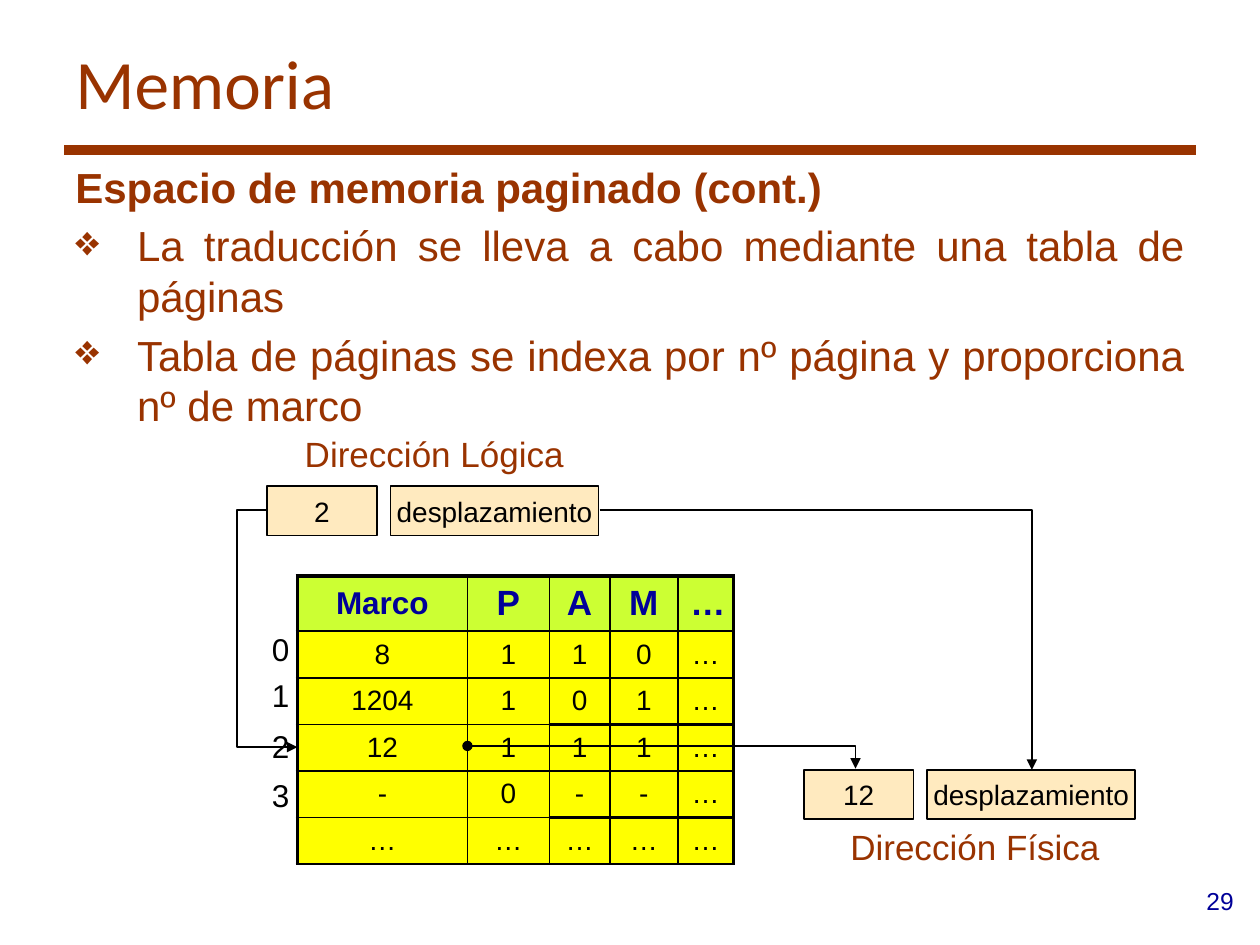
from lxml import etree
from pptx import Presentation
from pptx.dml.color import RGBColor
from pptx.enum.shapes import MSO_CONNECTOR, MSO_SHAPE
from pptx.enum.text import MSO_ANCHOR, PP_ALIGN
from pptx.oxml.ns import qn
from pptx.util import Inches, Pt

LEFT, CENTER, RIGHT, JUSTIFY = PP_ALIGN.LEFT, PP_ALIGN.CENTER, PP_ALIGN.RIGHT, PP_ALIGN.JUSTIFY
TOP, MIDDLE = MSO_ANCHOR.TOP, MSO_ANCHOR.MIDDLE
RECT = MSO_SHAPE.RECTANGLE
STRAIGHT, ELBOW = MSO_CONNECTOR.STRAIGHT, MSO_CONNECTOR.ELBOW

COLORS = {
    "brown": "993300",
    "navy": "000099",
    "black": "000000",
    "peach": "FFEABF",
    "lime": "CCFF33",
    "yellow": "FFFF00",
}
RGB = {name: RGBColor.from_string(value) for name, value in COLORS.items()}


def add_run(p, text, size, color, align=LEFT, bold=False, font="Arial"):
    p.alignment = align
    r = p.add_run()
    r.text = text
    r.font.name = font
    r.font.size = Pt(size)
    r.font.bold = bold
    r.font.color.rgb = RGB[color]


def add_line(kind, x1, y1, x2, y2, color, width):
    c = s.shapes.add_connector(kind, Inches(x1), Inches(y1), Inches(x2), Inches(y2))
    c.line.color.rgb = RGB[color]
    c.line.width = Pt(width)
    etree.SubElement(c._element.spPr, qn("a:effectLst"))
    return c


prs = Presentation()
prs.slide_width, prs.slide_height = Inches(10), Inches(7.5)
s = prs.slides.add_slide(prs.slide_layouts[6])

add_line(STRAIGHT, 0.51, 1.19, 9.49, 1.19, "brown", 6)

labels = [
    ("Memoria", 0.5, 0.3, 9, 0.69, 39.6, "brown", LEFT, MIDDLE, "Calibri"),
    ("29", 9.1, 6.98, 0.79, 0.29, 14, "navy", RIGHT, TOP, "Arial"),
    ("Dirección Lógica", 2.32, 3.38, 2.68, 0.39, 20, "brown", JUSTIFY, TOP, "Arial"),
    ("Dirección Física", 6.65, 6.5, 2.68, 0.39, 20, "brown", JUSTIFY, TOP, "Arial"),
]
for i, y in enumerate([4.95, 5.32, 5.72, 6.11]):
    labels.append((str(i), 2.06, y, 0.34, 0.4, 18, "black", LEFT, TOP, "Arial"))
for text, x, y, w, h, size, color, align, anchor, font in labels:
    tf = s.shapes.add_textbox(Inches(x), Inches(y), Inches(w), Inches(h)).text_frame
    tf.word_wrap = True
    tf.vertical_anchor = anchor
    add_run(tf.paragraphs[0], text, size, color, align, font=font)

tf = s.shapes.add_textbox(Inches(0.5), Inches(1.23), Inches(9), Inches(1.23)).text_frame
tf.word_wrap = True
add_run(tf.paragraphs[0], "Espacio de memoria paginado (cont.)", 24, "brown", JUSTIFY, True)
for text in [
    "La traducción se lleva a cabo mediante una tabla de páginas",
    "Tabla de páginas se indexa por nº página y proporciona nº de marco",
]:
    p = tf.add_paragraph()
    pPr = p._p.get_or_add_pPr()
    pPr.set("marL", str(Inches(0.49)))
    pPr.set("indent", str(-Inches(0.49)))
    etree.SubElement(pPr, qn("a:buChar")).set("char", "❖")
    p.space_before = Pt(4.8)
    add_run(p, text, 24, "brown", JUSTIFY)

for x, y, page in [(2.12, 3.86, "2"), (6.38, 6.11, "12")]:
    for dx, w, text in [(0, 0.87, page), (0.98, 1.65, "desplazamiento")]:
        sp = s.shapes.add_shape(RECT, Inches(x + dx), Inches(y), Inches(w), Inches(0.39))
        sp.shadow.inherit = False
        sp.fill.solid()
        sp.fill.fore_color.rgb = RGB["peach"]
        sp.line.color.rgb = RGB["black"]
        sp.line.width = Pt(1)
        tf = sp.text_frame
        tf.word_wrap = False
        tf.vertical_anchor = MIDDLE
        add_run(tf.paragraphs[0], text, 16, "black", CENTER)

rows = [
    ["Marco", "P", "A", "M", "…"],
    ["8", "1", "1", "0", "…"],
    ["1204", "1", "0", "1", "…"],
    ["12", "1", "1", "1", "…"],
    ["-", "0", "-", "-", "…"],
    ["…"] * 5,
]
widths = [1.35, 0.65, 0.48, 0.54, 0.44]
heights = [0.44] + [0.37] * 5
vertical = [2.25, 1, 1, 1.5, 1.5, 2.25]
table = s.shapes.add_table(
    len(rows), len(widths), Inches(2.36), Inches(4.57), Inches(sum(widths)), Inches(sum(heights))
).table
for col, w in zip(table.columns, widths):
    col.width = Inches(w)
for row, h in zip(table.rows, heights):
    row.height = Inches(h)
for i, row in enumerate(rows):
    for j, text in enumerate(row):
        cell = table.cell(i, j)
        cell.vertical_anchor = MIDDLE
        inner = 1 if j < 2 else 1.5
        borders = {
            "a:lnL": vertical[j],
            "a:lnR": vertical[j + 1],
            "a:lnT": 2.25 if i == 0 else inner,
            "a:lnB": 1 if i == len(rows) - 1 else inner,
        }
        for tag, width in borders.items():
            ln = etree.SubElement(cell._tc.get_or_add_tcPr(), qn(tag), w=str(Pt(width)))
            fill = etree.SubElement(ln, qn("a:solidFill"))
            etree.SubElement(fill, qn("a:srgbClr"), val=COLORS["black"])
        cell.fill.solid()
        cell.fill.fore_color.rgb = RGB["yellow" if i else "lime"]
        p = cell.text_frame.paragraphs[0]
        if i:
            add_run(p, text, 16, "black", CENTER)
        else:
            add_run(p, text, 20 if j else 18, "navy", CENTER, True)

for x1, y1, x2, y2, preset, adj, head in [
    (2.12, 4.05, 2.36, 5.93, "bentConnector3", -100000, None),
    (3.71, 5.92, 6.79, 6.1, "bentConnector2", None, "oval"),
    (4.76, 4.05, 8.19, 6.11, "bentConnector2", None, None),
]:
    c = add_line(ELBOW, x1, y1, x2, y2, "black", 1)
    geom = c._element.spPr.find(qn("a:prstGeom"))
    geom.set("prst", preset)
    if adj:
        etree.SubElement(geom.find(qn("a:avLst")), qn("a:gd"), name="adj1", fmla=f"val {adj}")
    ln = c.line._get_or_add_ln()
    if head:
        etree.SubElement(ln, qn("a:headEnd"), type=head)
    etree.SubElement(ln, qn("a:tailEnd"), type="triangle")

prs.save("out.pptx")
